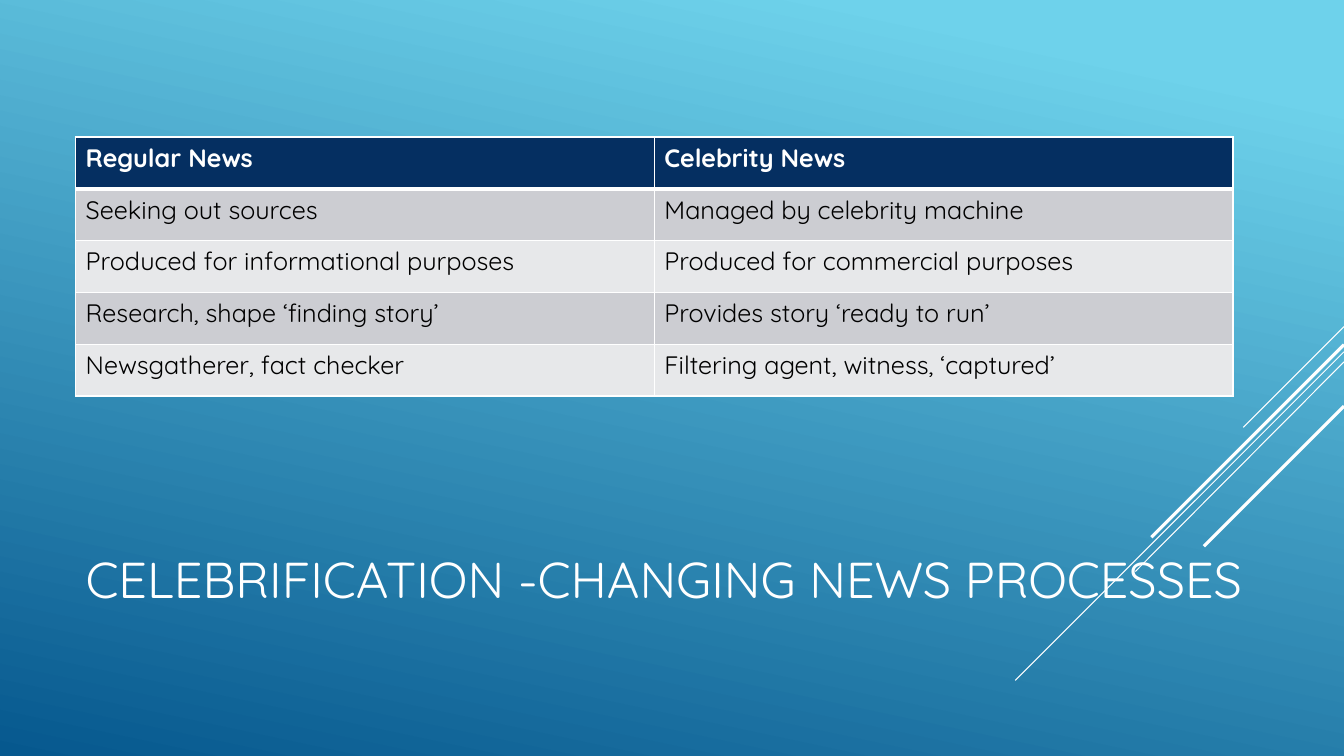
from lxml import etree
from pptx import Presentation
from pptx.dml.color import RGBColor
from pptx.enum.shapes import MSO_CONNECTOR
from pptx.enum.text import MSO_ANCHOR
from pptx.oxml.ns import qn
from pptx.util import Inches, Pt

STRAIGHT = MSO_CONNECTOR.STRAIGHT
MIDDLE = MSO_ANCHOR.MIDDLE

WHITE = RGBColor(0xFF, 0xFF, 0xFF)
BLACK = RGBColor(0x00, 0x00, 0x00)
NAVY = RGBColor(0x05, 0x2F, 0x61)
DARK_BAND = RGBColor(0xCC, 0xCD, 0xD2)
LIGHT_BAND = RGBColor(0xE7, 0xE8, 0xEA)
SKY = RGBColor(0x6E, 0xD2, 0xEB)
OCEAN = RGBColor(0x06, 0x58, 0x8E)

FONT = "Quicksand"
SLIDE_WIDTH = 13.33
LEFT = 0.75

TITLE = "CELEBRIFICATION -CHANGING NEWS PROCESSES"
NEWS_ROWS = [
    ("Regular News", "Celebrity News"),
    ("Seeking out sources", "Managed by celebrity machine"),
    ("Produced for informational purposes", "Produced for commercial purposes"),
    ("Research, shape ‘finding story’", "Provides story ‘ready to run’"),
    ("Newsgatherer, fact checker", "Filtering agent, witness, ‘captured’"),
]
STREAKS = [
    (3.24, 12.33, 4.24, 0.75),
    (3.49, 10.07, 6.75, 0.75),
    (3.59, 11.26, 5.67, 0.75),
    (3.42, 11.42, 5.33, 2.25),
    (4.03, 11.94, 5.42, 2.25),
]


def paint_background(slide):
    fill = slide.background.fill
    fill.gradient()
    fill.gradient_angle = 360 - 102
    for stop, color, position in zip(fill.gradient_stops, (SKY, OCEAN), (0.1, 1)):
        stop.color.rgb = color
        stop.position = position


def write_text(frame, text, size, color, bold=False):
    frame.text = text
    font = frame.paragraphs[0].runs[0].font
    font.name = FONT
    font.size = Pt(size)
    font.color.rgb = color
    font.bold = bold


def add_streak(slide, start_y, end_x, end_y, width):
    streak = slide.shapes.add_connector(
        STRAIGHT, Inches(SLIDE_WIDTH), Inches(start_y), Inches(end_x), Inches(end_y)
    )
    streak.line.color.rgb = WHITE
    streak.line.width = Pt(width)
    etree.SubElement(streak._element.spPr, qn("a:effectLst"))


def add_title(slide):
    title = slide.shapes.add_textbox(
        Inches(LEFT), Inches(4.91), Inches(12.11), Inches(1.65)
    )
    title.text_frame.word_wrap = True
    title.text_frame.vertical_anchor = MIDDLE
    write_text(title.text_frame, TITLE, 36, WHITE)


def set_borders(cell, top, bottom):
    properties = cell._tc.get_or_add_tcPr()
    edges = [("a:lnL", 1), ("a:lnR", 1), ("a:lnT", top), ("a:lnB", bottom)]
    for index, (edge, width) in enumerate(edges):
        border = etree.Element(qn(edge), w=str(Pt(width)))
        fill = etree.SubElement(border, qn("a:solidFill"))
        etree.SubElement(fill, qn("a:srgbClr"), val=str(WHITE))
        properties.insert(index, border)


def add_news_table(slide):
    row_count, column_count = len(NEWS_ROWS), len(NEWS_ROWS[0])
    table = slide.shapes.add_table(
        row_count, column_count,
        Inches(LEFT), Inches(1.36), Inches(11.48), Inches(2.57),
    ).table
    for row, texts in enumerate(NEWS_ROWS):
        header = row == 0
        band = NAVY if header else DARK_BAND if row % 2 else LIGHT_BAND
        for column, text in enumerate(texts):
            cell = table.cell(row, column)
            write_text(cell.text_frame, text, 18, WHITE if header else BLACK, header)
            cell.fill.solid()
            cell.fill.fore_color.rgb = band
            set_borders(cell, 3 if row == 1 else 1, 3 if header else 1)


def main():
    presentation = Presentation()
    presentation.slide_width = Inches(SLIDE_WIDTH)
    presentation.slide_height = Inches(7.5)
    slide = presentation.slides.add_slide(presentation.slide_layouts[6])
    paint_background(slide)
    for streak in STREAKS:
        add_streak(slide, *streak)
    add_title(slide)
    add_news_table(slide)
    presentation.save("out.pptx")


if __name__ == "__main__":
    main()
